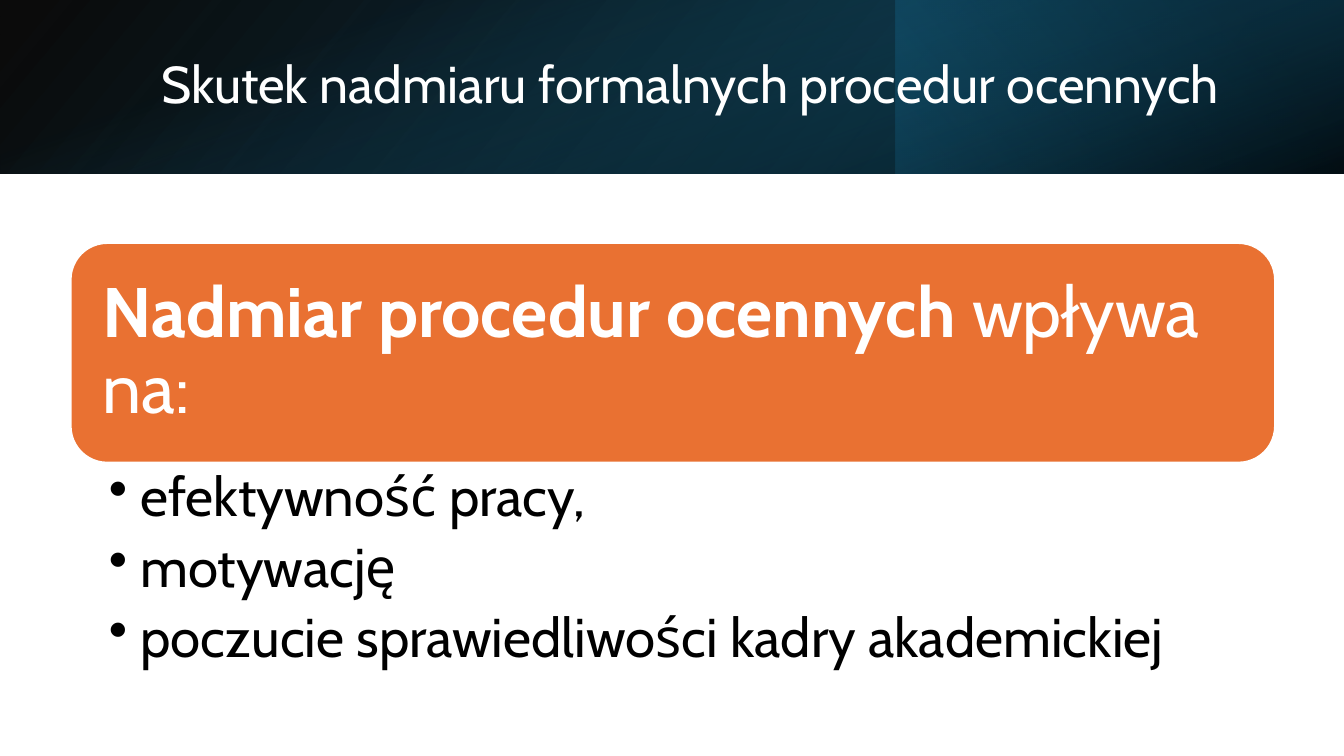
from lxml import etree
from pptx import Presentation
from pptx.dml.color import RGBColor
from pptx.enum import shapes, text
from pptx.oxml import ns
from pptx.util import Pt

COLORS = {
    "white": "FFFFFF", "black": "000000", "orange": "E97132",
    "navy": "104862", "deep": "0B3041", "teal": "156082",
}
FONT = "Cabin"

prs = Presentation()
prs.slide_width, prs.slide_height = Pt(960), Pt(540)
slide = prs.slides.add_slide(prs.slide_layouts[6])


def add_text(left, top, width, height, insets, anchor):
    box = slide.shapes.add_textbox(Pt(left), Pt(top), Pt(width), Pt(height))
    frame = box.text_frame
    frame.word_wrap = True
    frame.vertical_anchor = anchor
    frame.margin_left, frame.margin_top, frame.margin_right, frame.margin_bottom = map(Pt, insets)
    return frame


def add_run(paragraph, words, size, color, bold=False):
    paragraph.line_spacing = 0.9
    run = paragraph.add_run()
    run.text = words
    run.font.name, run.font.size, run.font.bold = FONT, Pt(size), bold
    run.font.color.rgb = RGBColor.from_string(COLORS[color])


# Header band: three layered gradients (box, rotation, flip, angle, stops)
# Each stop is position, colour, opacity in percent
layers = [
    ((0, 0, 960, 124), 0, True, 140, [(0, "black", 96), (100, "navy", 100)]),
    ((640, 0, 320, 124), 180, False, 320, [(19, "deep", 68), (100, "teal", 79)]),
    ((418, -418, 124, 960), 90, False, 340, [(23, "teal", 0), (99, "black", 74)]),
]
for box, rotation, flipped, angle, stops in layers:
    band = slide.shapes.add_shape(shapes.MSO_SHAPE.RECTANGLE, *map(Pt, box))
    band.shadow.inherit = False
    band.line.fill.background()
    band.rotation = rotation
    if flipped:
        band._element.spPr.find(ns.qn("a:xfrm")).set("flipH", "1")
    band.fill.gradient()
    band.fill.gradient_angle = 360 - angle
    for stop, (position, color, opacity) in zip(band.fill.gradient_stops, stops):
        stop.position = position / 100
        stop.color.rgb = RGBColor.from_string(COLORS[color])
    for rgb, (_, _, opacity) in zip(band._element.spPr.iter(ns.qn("a:srgbClr")), stops):
        etree.SubElement(rgb, ns.qn("a:alpha")).set("val", str(opacity * 1000))

# Title
title = add_text(108, 27.4, 790.6, 69, (7.2, 3.6, 7.2, 3.6), text.MSO_ANCHOR.MIDDLE)
add_run(title.paragraphs[0], "Skutek nadmiaru formalnych procedur ocennych", 37, "white")

# Orange statement
card = slide.shapes.add_shape(
    shapes.MSO_SHAPE.ROUNDED_RECTANGLE, Pt(50.4), Pt(173.5), Pt(860.4), Pt(157))
card.shadow.inherit = False
card.fill.solid()
card.fill.fore_color.rgb = RGBColor.from_string(COLORS["orange"])
card.line.color.rgb = RGBColor.from_string(COLORS["white"])
card.line.width = Pt(1.5)
statement = add_text(58.3, 181.4, 845.3, 141.1, (15,) * 4, text.MSO_ANCHOR.MIDDLE)
add_run(statement.paragraphs[0], "Nadmiar procedur ocennych", 50, "white", bold=True)
add_run(statement.paragraphs[0], " wpływa na:", 50, "white")

# Bulleted effects
effects = ["efektywność pracy,", "motywację", "poczucie sprawiedliwości kadry akademickiej"]
effect_list = add_text(50.4, 330.5, 860.4, 159, (27.4, 5, 28, 5), text.MSO_ANCHOR.TOP)
for i, effect in enumerate(effects):
    paragraph = effect_list.add_paragraph() if i else effect_list.paragraphs[0]
    paragraph.level = 1
    paragraph.space_after = Pt(8)
    add_run(paragraph, effect, 39, "black")
    properties = paragraph._p.get_or_add_pPr()
    properties.set("marL", str(Pt(22.5)))
    properties.set("indent", str(Pt(-22.5)))
    etree.SubElement(properties, ns.qn("a:buChar")).set("char", "•")

prs.save("out.pptx")
